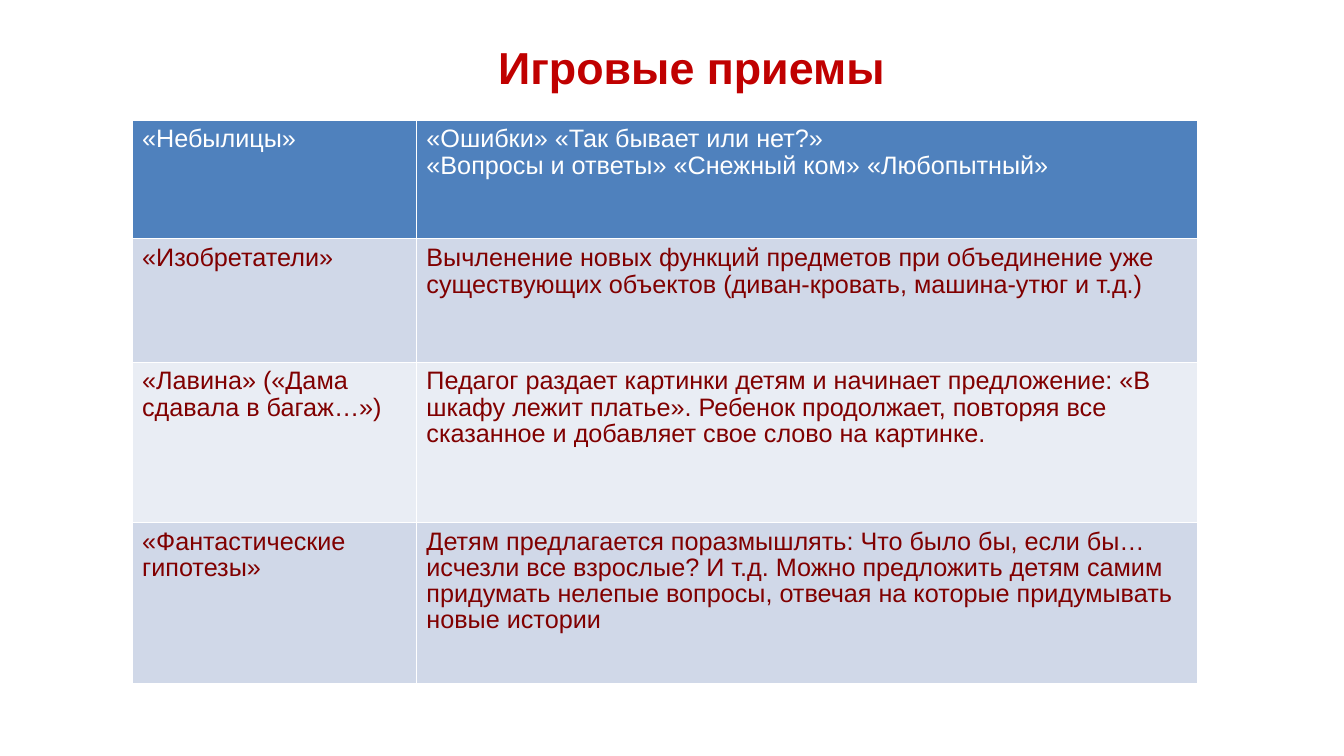
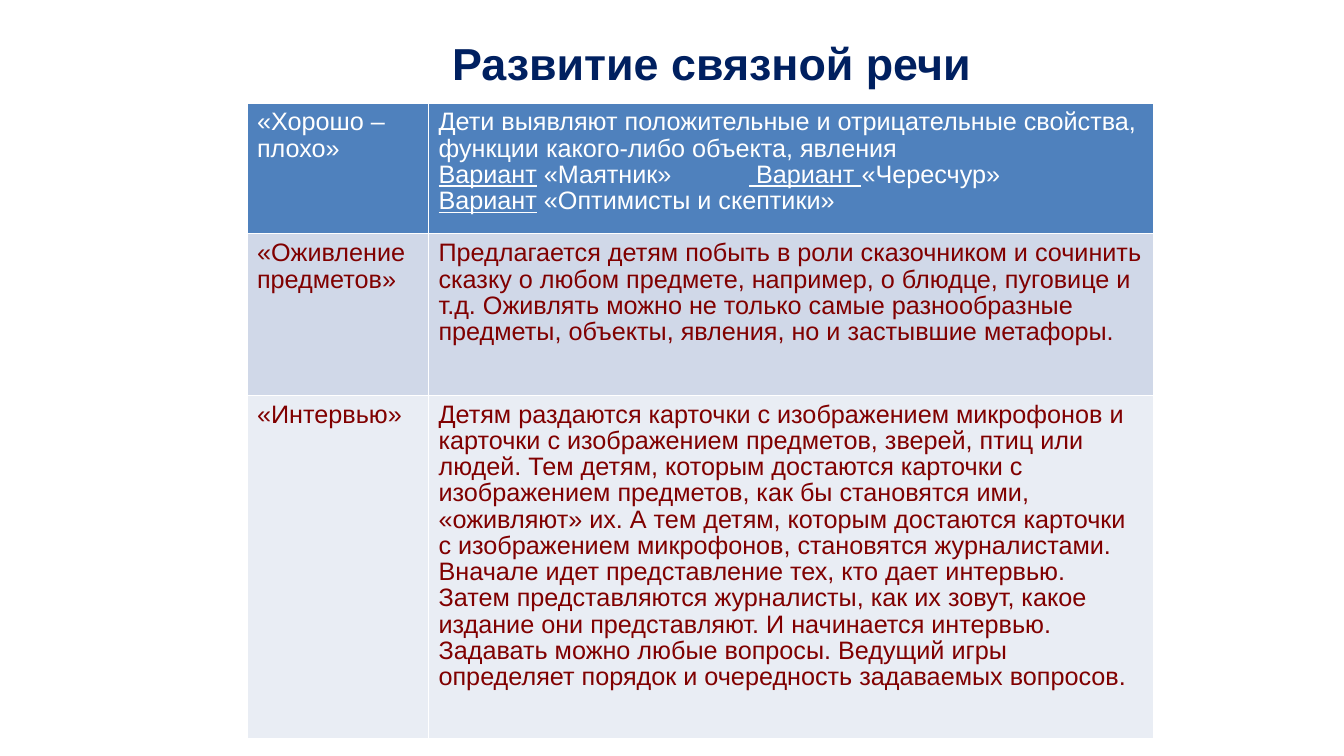
import pptx
import pptx.util
import pptx.dml.color
import pptx.enum.text
import pptx.oxml.ns
import lxml.etree

Inches = pptx.util.Inches
Pt = pptx.util.Pt
RGBColor = pptx.dml.color.RGBColor
qn = pptx.oxml.ns.qn

WHITE = RGBColor(0xFF, 0xFF, 0xFF)
RED = RGBColor(0xC0, 0x00, 0x00)
NAVY = RGBColor(0x00, 0x20, 0x60)
MAROON = RGBColor(0x80, 0x00, 0x00)
HEADER_BLUE = RGBColor(0x4F, 0x81, 0xBD)
BAND_DARK = RGBColor(0xD0, 0xD8, 0xE8)
BAND_LIGHT = RGBColor(0xE9, 0xED, 0xF4)
FONT = "Arial"
THIN, THICK = 0.23, 0.75
VARIANT_TAB = 3.08

SLIDES = [
    {
        "title": "Игровые приемы",
        "title_color": RED,
        "title_box": (3.46, 0.3, 6.8, 0.72),
        "table_corner": (1.31, 1.19),
        "columns": (2.82, 7.74),
        "heights": (1.18, 1.22, 1.59, 1.6),
        "rows": [
            ("«Небылицы»",
             "«Ошибки» «Так бывает или нет?»\n"
             "«Вопросы и ответы» «Снежный ком» «Любопытный»"),
            ("«Изобретатели»",
             "Вычленение новых функций предметов при объединение уже "
             "существующих объектов (диван-кровать, машина-утюг и т.д.)"),
            ("«Лавина» («Дама сдавала в багаж…»)",
             "Педагог раздает картинки детям и начинает предложение: "
             "«В шкафу лежит платье». Ребенок продолжает, повторяя все "
             "сказанное и добавляет свое слово на картинке."),
            ("«Фантастические гипотезы»",
             "Детям предлагается поразмышлять: Что было бы, если бы… "
             "исчезли все взрослые? И т.д. Можно предложить детям самим "
             "придумать нелепые вопросы, отвечая на которые придумывать "
             "новые истории"),
        ],
    },
    {
        "title": "Развитие связной речи ",
        "title_color": NAVY,
        "title_box": (2.76, 0.23, 8.72, 0.79),
        "table_corner": (2.45, 1.02),
        "columns": (1.8, 7.19),
        "heights": (1.3, 1.6, 3.4),
        "rows": [
            ("«Хорошо – плохо»",
             "Дети выявляют положительные и отрицательные свойства, "
             "функции какого-либо объекта, явления\n"
             "_Вариант_ «Маятник»\t_ Вариант _«Чересчур»\n"
             "_Вариант_ «Оптимисты и скептики»"),
            ("«Оживление предметов»",
             "Предлагается детям побыть в роли сказочником и сочинить "
             "сказку о любом предмете, например, о блюдце, пуговице и т.д. "
             "Оживлять можно не только самые разнообразные предметы, "
             "объекты, явления, но и застывшие метафоры."),
            ("«Интервью»",
             "Детям раздаются карточки с изображением микрофонов и карточки "
             "с изображением предметов, зверей, птиц или людей. Тем детям, "
             "которым достаются карточки с изображением предметов, как бы "
             "становятся ими, «оживляют» их. А тем детям, которым достаются "
             "карточки с изображением микрофонов, становятся журналистами. "
             "Вначале идет представление тех, кто дает интервью. Затем "
             "представляются журналисты, как их зовут, какое издание они "
             "представляют. И начинается интервью. Задавать можно любые "
             "вопросы. Ведущий игры определяет порядок и очередность "
             "задаваемых вопросов."),
        ],
    },
]


def style_cell(cell, row_number):
    cell.margin_left = cell.margin_right = Inches(0.1)
    cell.margin_top = Inches(0.07)
    cell.margin_bottom = Inches(0.05)
    properties = cell._tc.get_or_add_tcPr()
    top = THICK if row_number == 1 else THIN
    bottom = THICK if row_number == 0 else THIN
    for side, width in (("L", THIN), ("R", THIN), ("T", top), ("B", bottom)):
        line = lxml.etree.SubElement(properties, qn("a:ln" + side), w=str(Pt(width)))
        fill = lxml.etree.SubElement(line, qn("a:solidFill"))
        lxml.etree.SubElement(fill, qn("a:srgbClr"), val=str(WHITE))
    cell.fill.solid()
    if row_number == 0:
        cell.fill.fore_color.rgb = HEADER_BLUE
    else:
        cell.fill.fore_color.rgb = BAND_DARK if row_number % 2 else BAND_LIGHT


def write_cell(cell, text, color):
    for number, line in enumerate(text.split("\n")):
        frame = cell.text_frame
        para = frame.add_paragraph() if number else frame.paragraphs[0]
        para.line_spacing = 0.93
        if "\t" in line:
            tabs = lxml.etree.SubElement(para._p.get_or_add_pPr(), qn("a:tabLst"))
            lxml.etree.SubElement(tabs, qn("a:tab"), pos=str(Inches(VARIANT_TAB)), algn="l")
        para.font.name = FONT
        para.font.size = Pt(18)
        para.font.color.rgb = color
        for position, part in enumerate(line.split("_")):
            if part:
                span = para.add_run()
                span.text = part
                if position % 2:
                    span.font.underline = True


deck = pptx.Presentation()
deck.slide_width = Inches(13.33)
deck.slide_height = Inches(7.5)

for content in SLIDES:
    page = deck.slides.add_slide(deck.slide_layouts[5])
    title = page.shapes.title
    title.left, title.top, title.width, title.height = map(Inches, content["title_box"])
    title.text_frame.text = content["title"]
    title.text_frame.vertical_anchor = pptx.enum.text.MSO_ANCHOR.MIDDLE
    heading = title.text_frame.paragraphs[0]
    heading.alignment = pptx.enum.text.PP_ALIGN.CENTER
    heading.font.name = FONT
    heading.font.size = Pt(32)
    heading.font.bold = True
    heading.font.color.rgb = content["title_color"]

    left, top = content["table_corner"]
    columns, heights = content["columns"], content["heights"]
    table = page.shapes.add_table(
        len(heights), len(columns), Inches(left), Inches(top),
        Inches(sum(columns)), Inches(sum(heights))).table
    table.first_row = False
    table.horz_banding = False
    for column, width in zip(table.columns, columns):
        column.width = Inches(width)
    for row_number, texts in enumerate(content["rows"]):
        table.rows[row_number].height = Inches(heights[row_number])
        color = MAROON if row_number else WHITE
        for column_number, text in enumerate(texts):
            cell = table.cell(row_number, column_number)
            style_cell(cell, row_number)
            write_cell(cell, text, color)

deck.save("out.pptx")
